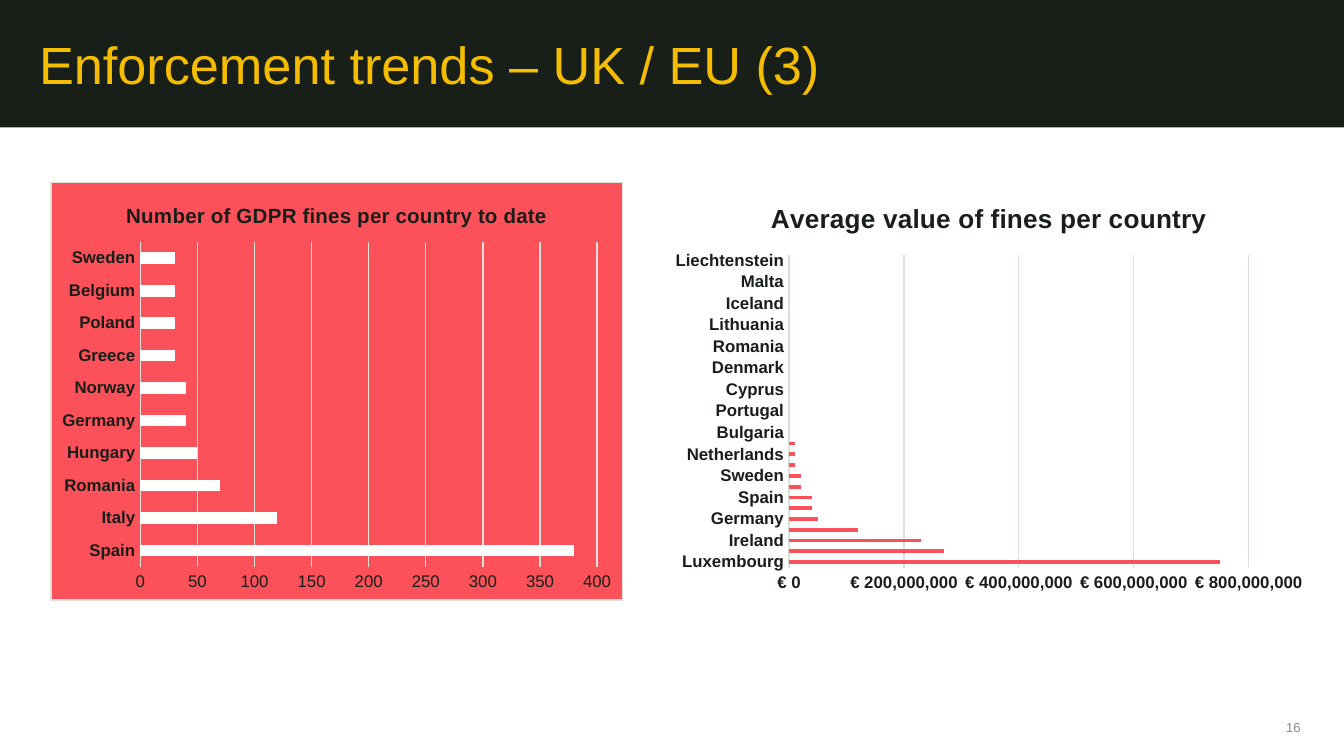
from lxml import etree
from pptx import Presentation
from pptx.chart.data import CategoryChartData as ChartData
from pptx.dml.color import RGBColor
from pptx.enum.chart import XL_CHART_TYPE as ChartType, XL_TICK_MARK as TickMark
from pptx.enum.shapes import MSO_SHAPE as Preset
from pptx.enum.text import MSO_ANCHOR as Anchor, PP_ALIGN as Align
from pptx.oxml import parse_xml
from pptx.oxml.ns import nsdecls, qn
from pptx.util import Cm, Pt

COLORS = {
    "dark": "181E18",
    "yellow": "F5BD00",
    "red": "FC515B",
    "white": "FFFFFF",
    "grid": "D9E1D9",
    "grey": "8B8B8B",
}
FONT = "Arial"
MILLION = 1_000_000

FINE_COUNTS = {
    "Spain": 380, "Italy": 120, "Romania": 70, "Hungary": 50, "Germany": 40,
    "Norway": 40, "Greece": 30, "Poland": 30, "Belgium": 30, "Sweden": 30,
}
FINE_MILLIONS = {
    "Luxembourg": 750, "France": 270, "Ireland": 230, "Italy": 120,
    "Germany": 50, "United Kingdom": 40, "Spain": 40, "Austria": 20,
    "Sweden": 20, "Greece": 10, "Netherlands": 10, "Norway": 10,
}
NEAR_ZERO = [
    "Bulgaria", "Poland", "Portugal", "Belgium", "Cyprus", "Finland",
    "Denmark", "Hungary", "Romania", "Estonia", "Lithuania", "Latvia",
    "Iceland", "Czech Republic", "Malta", "Isle of Man", "Liechtenstein",
]


def rgb(name):
    return RGBColor.from_string(COLORS[name])


class SlideBuilder:
    def __init__(self, slide):
        self.slide = slide

    def style_font(self, font, size, color="dark", bold=False):
        font.name = FONT
        font.size = Pt(size)
        font.bold = bold
        font.color.rgb = rgb(color)

    def band(self, left, top, width, height, color):
        band = self.slide.shapes.add_shape(
            Preset.RECTANGLE, Cm(left), Cm(top), Cm(width), Cm(height))
        band.shadow.inherit = False
        band.fill.solid()
        band.fill.fore_color.rgb = rgb(color)
        band.line.fill.background()

    def text(self, left, top, width, height, words, size, color, align=Align.LEFT):
        box = self.slide.shapes.add_textbox(
            Cm(left), Cm(top), Cm(width), Cm(height))
        frame = box.text_frame
        frame.word_wrap = True
        frame.vertical_anchor = Anchor.MIDDLE
        frame.margin_left = frame.margin_right = 0
        frame.margin_top = frame.margin_bottom = 0
        para = frame.paragraphs[0]
        para.alignment = align
        span = para.add_run()
        span.text = words
        self.style_font(span.font, size, color)

    def bar_chart(self, left, top, width, height, title, title_size, values,
                  bar_color, maximum, step, number_format="General",
                  bold_values=False, background=None):
        data = ChartData(number_format=number_format)
        data.categories = list(values)
        data.add_series("Series 1", list(values.values()))
        chart = self.slide.shapes.add_chart(
            ChartType.BAR_CLUSTERED, Cm(left), Cm(top), Cm(width), Cm(height),
            data).chart
        self.style_font(chart.font, 10)
        chart.has_legend = False
        self.chart_background(chart, background)

        chart.has_title = True
        chart.chart_title.include_in_layout = False
        span = chart.chart_title.text_frame.paragraphs[0].add_run()
        span.text = title
        self.style_font(span.font, title_size, bold=True)

        plot = chart.plots[0]
        plot.gap_width = 182
        plot.vary_by_categories = False
        bars = plot.series[0].format.fill
        bars.solid()
        bars.fore_color.rgb = rgb(bar_color)

        for axis, bold in ((chart.category_axis, True),
                           (chart.value_axis, bold_values)):
            axis.major_tick_mark = axis.minor_tick_mark = TickMark.NONE
            self.style_font(axis.tick_labels.font, 9, bold=bold)
        value_axis = chart.value_axis
        value_axis.minimum_scale = 0
        value_axis.maximum_scale = maximum
        value_axis.major_unit = step
        value_axis.has_major_gridlines = True
        value_axis.format.line.fill.background()
        value_axis.tick_labels.number_format = number_format
        value_axis.tick_labels.number_format_is_linked = False
        for line in (chart.category_axis.format.line,
                     value_axis.major_gridlines.format.line):
            line.color.rgb = rgb("grid")
            line.width = Pt(0.75)

    def chart_background(self, chart, color):
        """Fill and outline the chart area, or clear both if color is None."""
        area = parse_xml(f"<c:spPr {nsdecls('c', 'a')}/>")
        outline = etree.Element(qn("a:ln"), w=str(Pt(0.75)))
        for parent, name in ((area, color), (outline, color and "grid")):
            if name:
                fill = etree.SubElement(parent, qn("a:solidFill"))
                etree.SubElement(fill, qn("a:srgbClr"), val=COLORS[name])
            else:
                etree.SubElement(parent, qn("a:noFill"))
        area.append(outline)
        chart.font  # the text properties must follow the area properties
        chart.element.find(qn("c:txPr")).addprevious(area)


def main():
    deck = Presentation()
    deck.slide_width, deck.slide_height = Cm(25.4), Cm(14.28)
    page = SlideBuilder(deck.slides.add_slide(deck.slide_layouts[6]))

    page.band(0, 0, 25.4, 2.41, "dark")
    page.text(0.74, 0.6, 23.92, 1.2, "Enforcement trends – UK / EU (3)",
              28, "yellow")
    page.text(24.23, 13.59, 0.43, 0.3, "16", 7, "grey", Align.CENTER)

    page.bar_chart(0.95, 3.43, 10.83, 7.92,
                   "Number of GDPR fines per country to date", 11,
                   FINE_COUNTS, "white", 400, 50, background="red")
    averages = {name: value * MILLION for name, value in FINE_MILLIONS.items()}
    averages.update(dict.fromkeys(NEAR_ZERO, 0))
    page.bar_chart(12.52, 3.43, 12.34, 7.92,
                   "Average value of fines per country", 14,
                   averages, "red", 800 * MILLION, 200 * MILLION,
                   number_format='"€ "#,##0', bold_values=True)

    deck.save("out.pptx")


if __name__ == "__main__":
    main()
